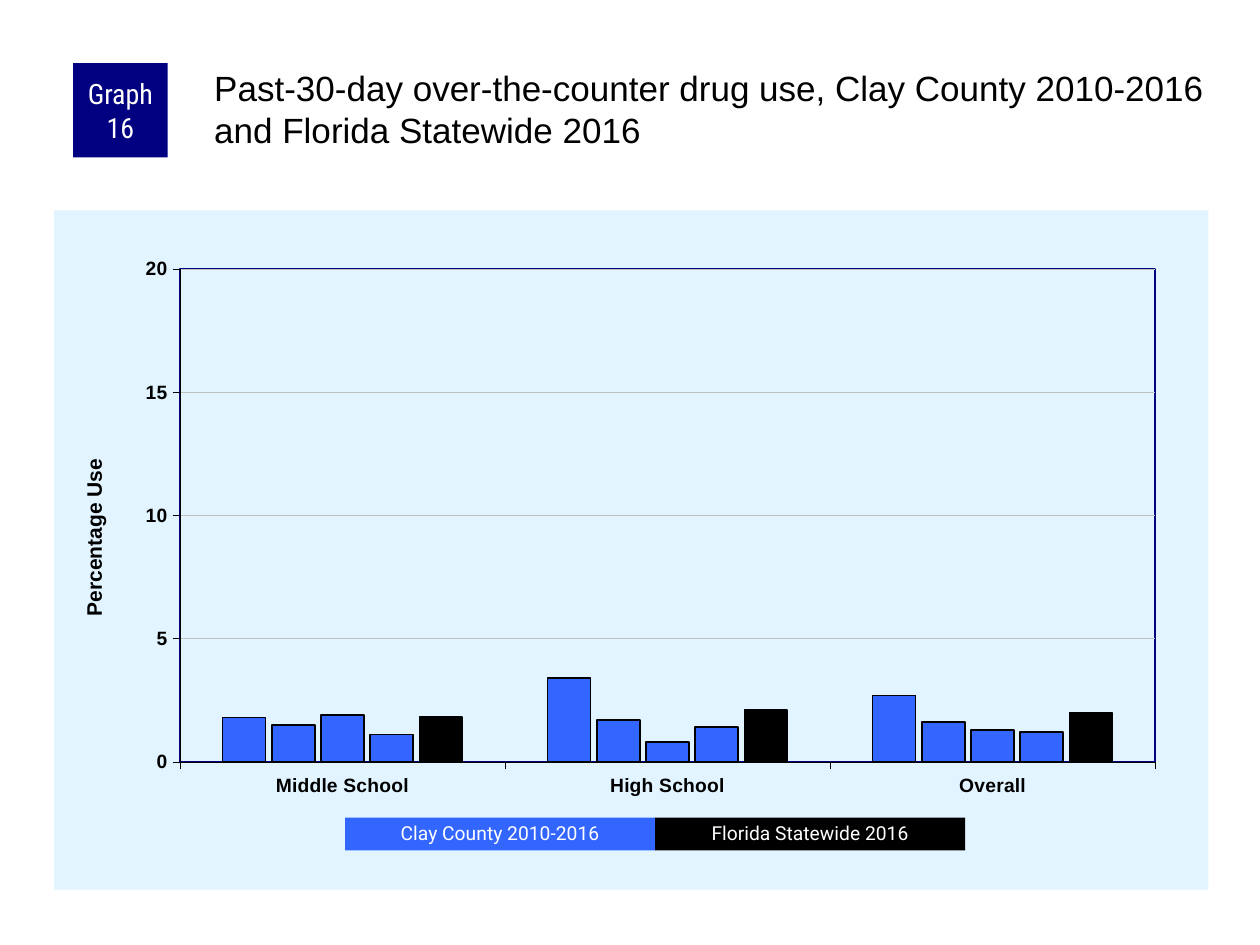
from lxml import etree
from pptx import Presentation
from pptx.chart.data import CategoryChartData
from pptx.dml.color import RGBColor
from pptx.enum import chart as ch, shapes, text
from pptx.oxml import parse_xml
from pptx.oxml.ns import nsdecls, qn
from pptx import util as u

PX = 9144  # EMU per px, 100 px to the inch
BLUE, NAVY, BLACK, WHITE = "3366FF", "000080", "000000", "FFFFFF"
PALE, GRAY = "E1F4FF", "C0C0C0"


def rgb(code):
    return RGBColor.from_string(code)


def layout(x, y, w=None, h=None):
    """Manual layout, as fractions of the chart."""
    tags = [("xMode", "edge"), ("yMode", "edge"), ("x", x), ("y", y)]
    if w:
        tags = [("layoutTarget", "inner")] + tags + [("w", w), ("h", h)]
    body = "".join(f'<c:{tag} val="{val}"/>' for tag, val in tags)
    return parse_xml(f'<c:layout {nsdecls("c")}><c:manualLayout>{body}'
                     '</c:manualLayout></c:layout>')


class Deck:
    def __init__(self, wide, high):
        self.prs = Presentation()
        self.prs.slide_width, self.prs.slide_height = wide * PX, high * PX
        self.slide = self.prs.slides.add_slide(self.prs.slide_layouts[6])

    def style(self, font, size, color=BLACK, bold=False, face="Arial"):
        font.name, font.size, font.bold = face, u.Pt(size), bold
        font.color.rgb = rgb(color)

    def line(self, ln, color, width):
        ln.color.rgb, ln.width = rgb(color), u.Pt(width)

    def label(self, frame, words, size, color, face):
        frame.word_wrap = True
        frame.text = words
        for run in frame.paragraphs[0].runs:
            self.style(run.font, size, color, face=face)
        return frame.paragraphs[0]

    def title(self, box, words, size):
        frame = self.slide.shapes.add_textbox(*(n * PX for n in box)).text_frame
        frame.margin_left = frame.margin_top = 3 * PX
        frame.margin_right = frame.margin_bottom = 0
        self.label(frame, words, size, BLACK, "Arial")

    def block(self, box, fill, words, size, face, pad, space=1.0):
        shape = self.slide.shapes.add_shape(
            shapes.MSO_SHAPE.RECTANGLE, *(n * PX for n in box))
        shape.shadow.inherit = False
        shape.fill.solid()
        shape.fill.fore_color.rgb = rgb(fill)
        shape.line.fill.background()
        frame = shape.text_frame
        frame.vertical_anchor = text.MSO_ANCHOR.MIDDLE
        frame.margin_left = frame.margin_right = pad * PX
        frame.margin_top = frame.margin_bottom = 0
        para = self.label(frame, words, size, WHITE, face)
        para.alignment = text.PP_ALIGN.CENTER
        para.line_spacing = space

    def bars(self, box, cats, rows, name):
        data = CategoryChartData(number_format="General")
        data.categories = cats
        for num, row in enumerate(rows, 1):
            data.add_series(f"Series {num}", row)
        chart = self.slide.shapes.add_chart(
            ch.XL_CHART_TYPE.COLUMN_CLUSTERED,
            *(n * PX for n in box), data).chart
        chart.has_legend = chart.has_title = False
        self.style(chart.font, 8)

        # Columns: county years in blue, the state last in black
        plot = chart.plots[0]
        plot.vary_by_categories = False
        plot.gap_width, plot.overlap = 200, -15
        for num, ser in enumerate(plot.series):
            ser.format.fill.solid()
            last = num == len(rows) - 1
            ser.format.fill.fore_color.rgb = rgb(BLACK if last else BLUE)
            self.line(ser.format.line, BLACK, 1 if num else 0.75)

        # Axes
        val = chart.value_axis
        for axis in (chart.category_axis, val):
            self.style(axis.tick_labels.font, 11, bold=True)
            self.line(axis.format.line, BLACK, 0.25)
            axis.major_tick_mark = ch.XL_TICK_MARK.OUTSIDE
        val.minimum_scale, val.maximum_scale, val.major_unit = 0, 20, 5
        val.has_major_gridlines = True
        self.line(val.major_gridlines.format.line, GRAY, 0.25)
        frame = val.axis_title.text_frame
        frame.text = name
        self.style(frame.paragraphs[0].runs[0].font, 12, bold=True)
        head = val.axis_title._element
        for old in head.findall(qn("c:layout")):
            head.remove(old)
        head.find(qn("c:tx")).addnext(layout(0.02, 0.36))

        # Plot position, plot frame and chart background
        root = chart._chartSpace.chart
        area = root.plotArea
        for old in area.findall(qn("c:layout")):
            area.remove(old)
        area.insert(0, layout(0.109, 0.086, 0.845, 0.726))
        area.append(self.paint(None, NAVY))
        root.addnext(self.paint(PALE, None))

    def paint(self, fill, edge):
        part = parse_xml(f'<c:spPr {nsdecls("c", "a")}/>')

        def add(home, color):
            if color is None:
                etree.SubElement(home, qn("a:noFill"))
            else:
                solid = etree.SubElement(home, qn("a:solidFill"))
                etree.SubElement(solid, qn("a:srgbClr"), val=color)

        add(part, fill)
        add(etree.SubElement(part, qn("a:ln"), w=str(u.Pt(1))), edge)
        return part


def main():
    deck = Deck(1000, 750)

    # Chart
    deck.bars((43, 167, 916, 539),
              ["Middle School", "High School", "Overall"],
              [(1.8, 3.4, 2.7), (1.5, 1.7, 1.6), (1.9, 0.8, 1.3),
               (1.1, 1.4, 1.2), (1.8, 2.1, 2)],
              "Percentage Use")

    # Heading
    deck.block((58, 50, 75, 75), NAVY, "Graph 16", 16, "Roboto Condensed", 5)
    deck.title((167, 50, 792, 83),
               "Past-30-day over-the-counter drug use, Clay County 2010-2016 "
               "and Florida Statewide 2016", 20)

    # Legend
    keys = [("Clay County 2010-2016", BLUE), ("Florida Statewide 2016", BLACK)]
    for num, (words, fill) in enumerate(keys):
        deck.block((274 + 246 * num, 649, 246, 26), fill, words, 11,
                   "Roboto", 10, 0.9)

    deck.prs.save("out.pptx")


if __name__ == "__main__":
    main()
